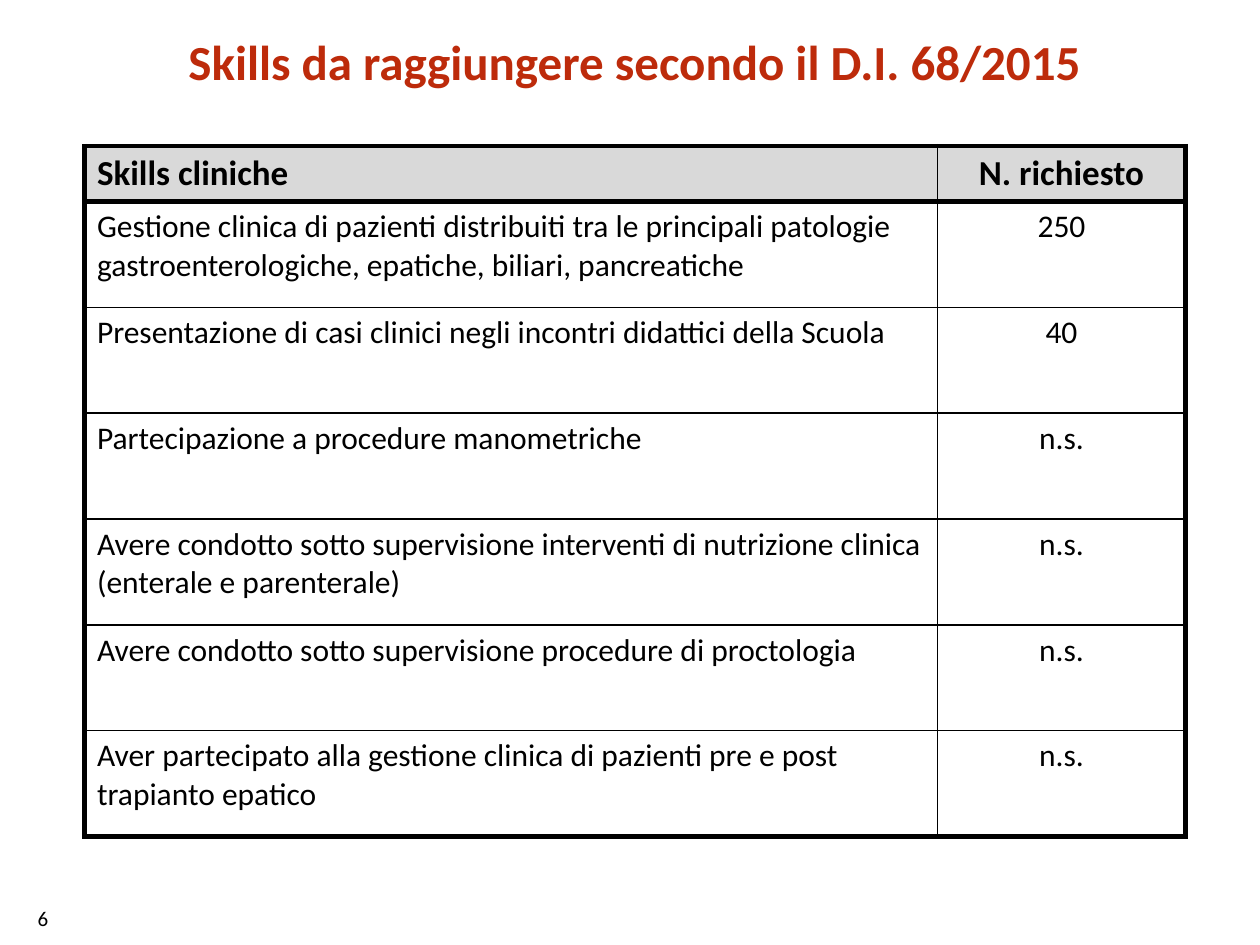
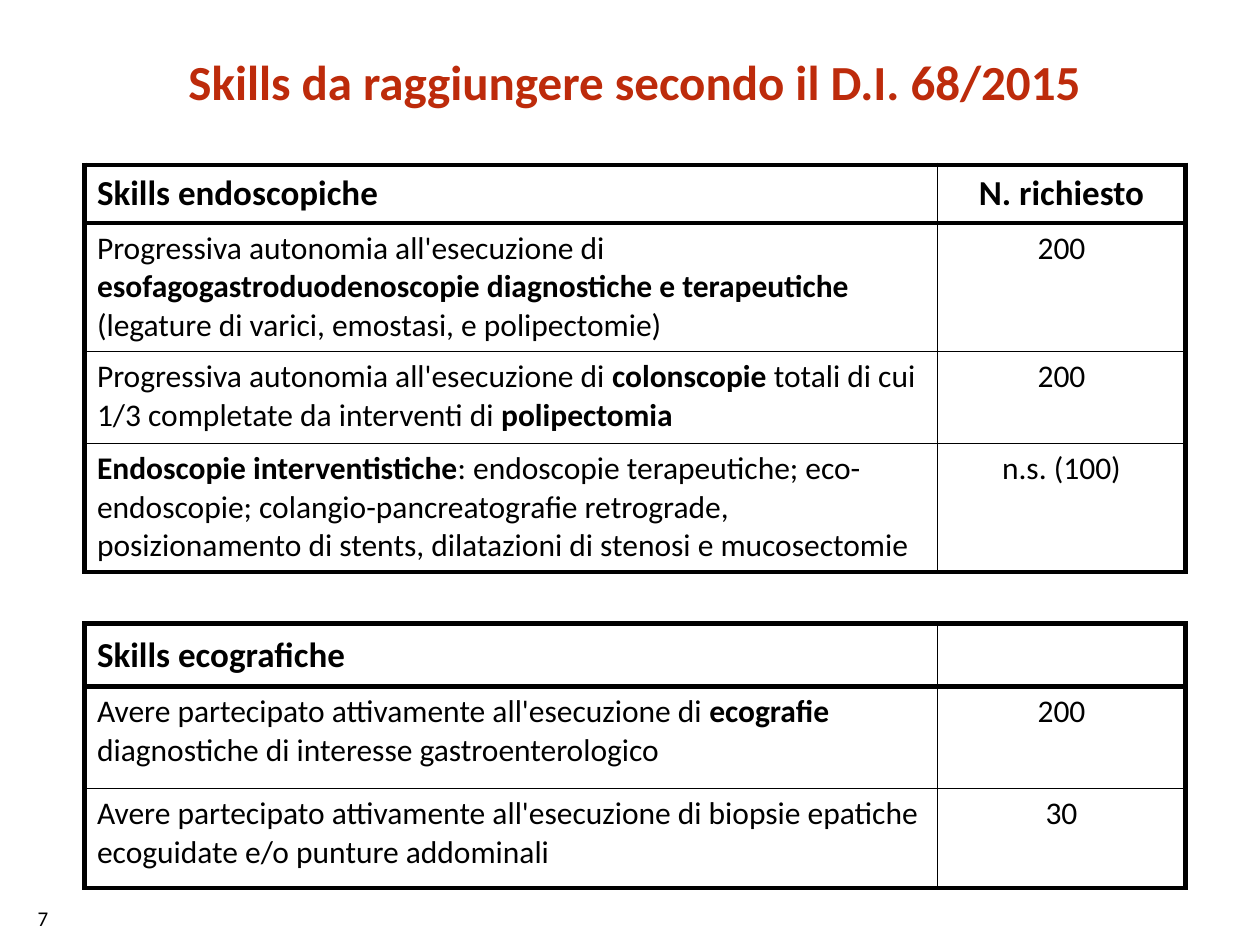
from pptx import Presentation
from pptx.dml.color import RGBColor
from pptx.enum.text import MSO_ANCHOR, PP_ALIGN
from pptx.oxml import parse_xml
from pptx.oxml.ns import nsdecls
from pptx.util import Inches, Pt

RED = RGBColor(0xBD, 0x2B, 0x0B)
BLACK = RGBColor(0, 0, 0)
WHITE = RGBColor(255, 255, 255)
GREY = RGBColor(0xD9, 0xD9, 0xD9)
FONT = "Calibri"
TITLE = "Skills da raggiungere secondo il D.I. 68/2015"
COUNT = "N. richiesto"
LEFT = 0.67
WIDTHS = (6.77, 1.97)
THICK, THIN = 3, 1

CLINIC = [
    (0.44, "Skills cliniche", COUNT),
    (0.84, "Gestione clinica di pazienti distribuiti tra le principali patologie "
           "gastroenterologiche, epatiche, biliari, pancreatiche", "250"),
    (0.84, "Presentazione di casi clinici negli incontri didattici della Scuola", "40"),
    (0.84, "Partecipazione a procedure manometriche", "n.s."),
    (0.84, "Avere condotto sotto supervisione interventi di nutrizione clinica "
           "(enterale e parenterale)", "n.s."),
    (0.84, "Avere condotto sotto supervisione procedure di proctologia", "n.s."),
    (0.84, "Aver partecipato alla gestione clinica di pazienti pre e post "
           "trapianto epatico", "n.s."),
]
SCOPE = [
    (0.46, "Skills endoscopiche", COUNT),
    (1.02, "Progressiva autonomia all'esecuzione di *esofagogastroduodenoscopie "
           "diagnostiche e terapeutiche* (legature di varici, emostasi, e polipectomie)", "200"),
    (0.73, "Progressiva autonomia all'esecuzione di *colonscopie *totali di cui 1/3 "
           "completate da interventi di *polipectomia*", "200"),
    (1.02, "*Endoscopie interventistiche*: endoscopie terapeutiche; eco-endoscopie; "
           "colangio-pancreatografie retrograde, posizionamento di stents, "
           "dilatazioni di stenosi e mucosectomie", "n.s. (100)"),
]
GAP = [(0.41, "", "")]
ECHO = [
    (0.5, "Skills ecografiche", ""),
    (0.81, "Avere partecipato attivamente all'esecuzione di *ecografie *diagnostiche "
           "di interesse gastroenterologico", "200"),
    (0.79, "Avere partecipato attivamente all'esecuzione di biopsie epatiche "
           "ecoguidate e/o punture addominali", "30"),
]


def style(para, size, color=BLACK, bold=False):
    font = para.font
    font.name, font.size, font.bold = FONT, Pt(size), bold
    font.color.rgb = color


def add_text(slide, box, text, size, color=BLACK, bold=False):
    frame = slide.shapes.add_textbox(*map(Inches, box)).text_frame
    frame.word_wrap = True
    para = frame.paragraphs[0]
    para.text = text
    style(para, size, color, bold)
    return para


def add_frame(deck, number, top):
    slide = deck.slides.add_slide(deck.slide_layouts[6])
    add_text(slide, (0.2, 7.14, 0.87, 0.3), str(number), 12)
    title = add_text(slide, (0.43, top, 9.21, 0.47), TITLE, 28, RED, True)
    title.alignment = PP_ALIGN.CENTER
    title.line_spacing = Pt(22)
    return slide


def set_lines(cell, left, right, top, bottom):
    props = cell._tc.get_or_add_tcPr()
    for side, width in zip("LRTB", (left, right, top, bottom)):
        fill = '<a:solidFill><a:srgbClr val="000000"/></a:solidFill>' if width else "<a:noFill/>"
        props.append(parse_xml(
            f'<a:ln{side} {nsdecls("a")} w="{Pt(width)}">{fill}</a:ln{side}>'))


def fill_cell(cell, text, col, head, shade):
    para = cell.text_frame.paragraphs[0]
    style(para, 20 if head else 18, bold=head)
    if col:
        para.alignment = PP_ALIGN.CENTER
    for i, part in enumerate(text.split("*")):
        if part:
            run = para.add_run()
            run.text = part
            if i % 2:
                run.font.bold = True
    if head:
        cell.vertical_anchor = MSO_ANCHOR.MIDDLE
    cell.fill.solid()
    cell.fill.fore_color.rgb = shade if head else WHITE


def add_grid(slide, top, blocks, shade=WHITE):
    rows = [(block, i) for block in blocks for i in range(len(block))]
    high = sum(block[i][0] for block, i in rows)
    table = slide.shapes.add_table(
        len(rows), len(WIDTHS), Inches(LEFT), Inches(top),
        Inches(sum(WIDTHS)), Inches(high)).table
    table.first_row = table.horz_banding = False
    for col, width in zip(table.columns, WIDTHS):
        col.width = Inches(width)
    for r, (block, i) in enumerate(rows):
        height, *texts = block[i]
        table.rows[r].height = Inches(height)
        gap = block is GAP
        upper = THICK if i < 2 else THIN
        lower = THICK if i in (0, len(block) - 1) else THIN
        for c, text in enumerate(texts):
            cell = table.cell(r, c)
            sides = (0, 0) if gap else ((THIN, THICK) if c else (THICK, THIN))
            set_lines(cell, *sides, upper, lower)
            fill_cell(cell, text, c, i == 0 and not gap, shade)


def main():
    deck = Presentation()
    deck.slide_width, deck.slide_height = Inches(10), Inches(7.5)
    add_grid(add_frame(deck, 6, 0.36), 1.16, [CLINIC], GREY)
    add_grid(add_frame(deck, 7, 0.52), 1.31, [SCOPE, GAP, ECHO])
    deck.save("out.pptx")


if __name__ == "__main__":
    main()
